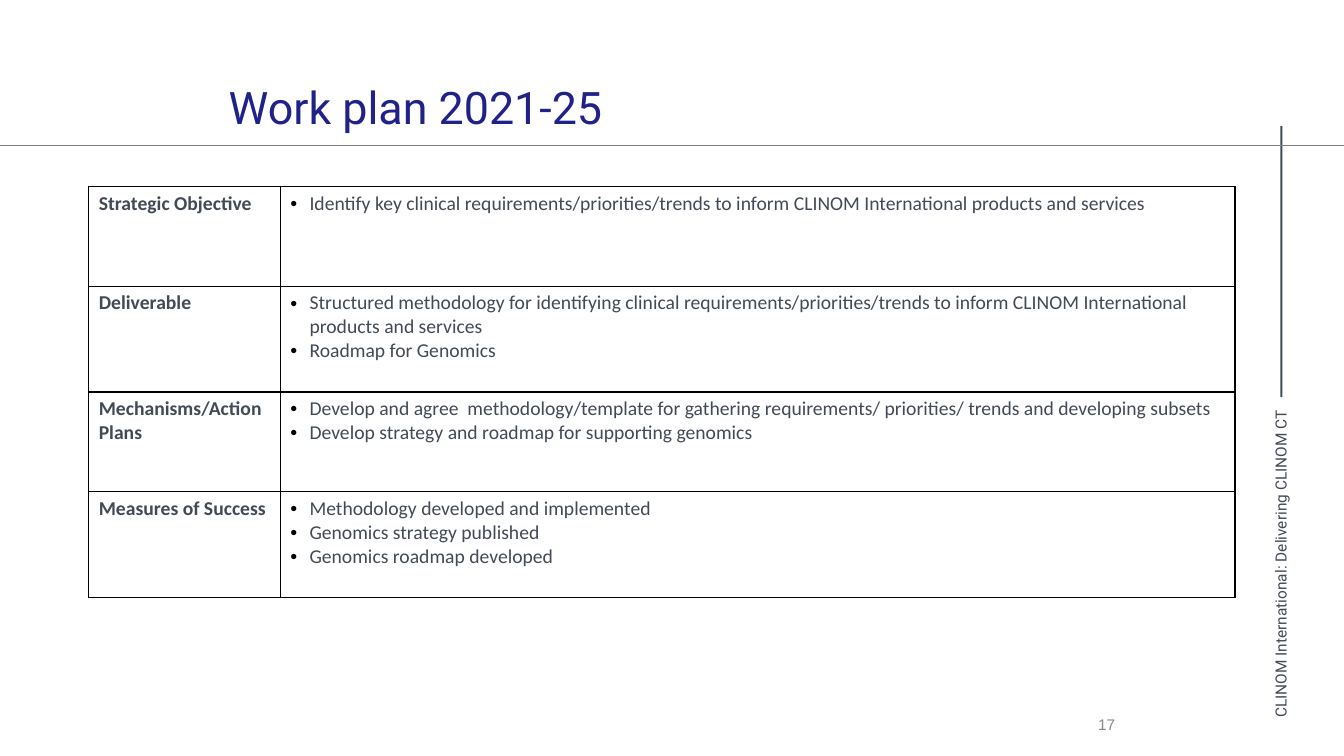
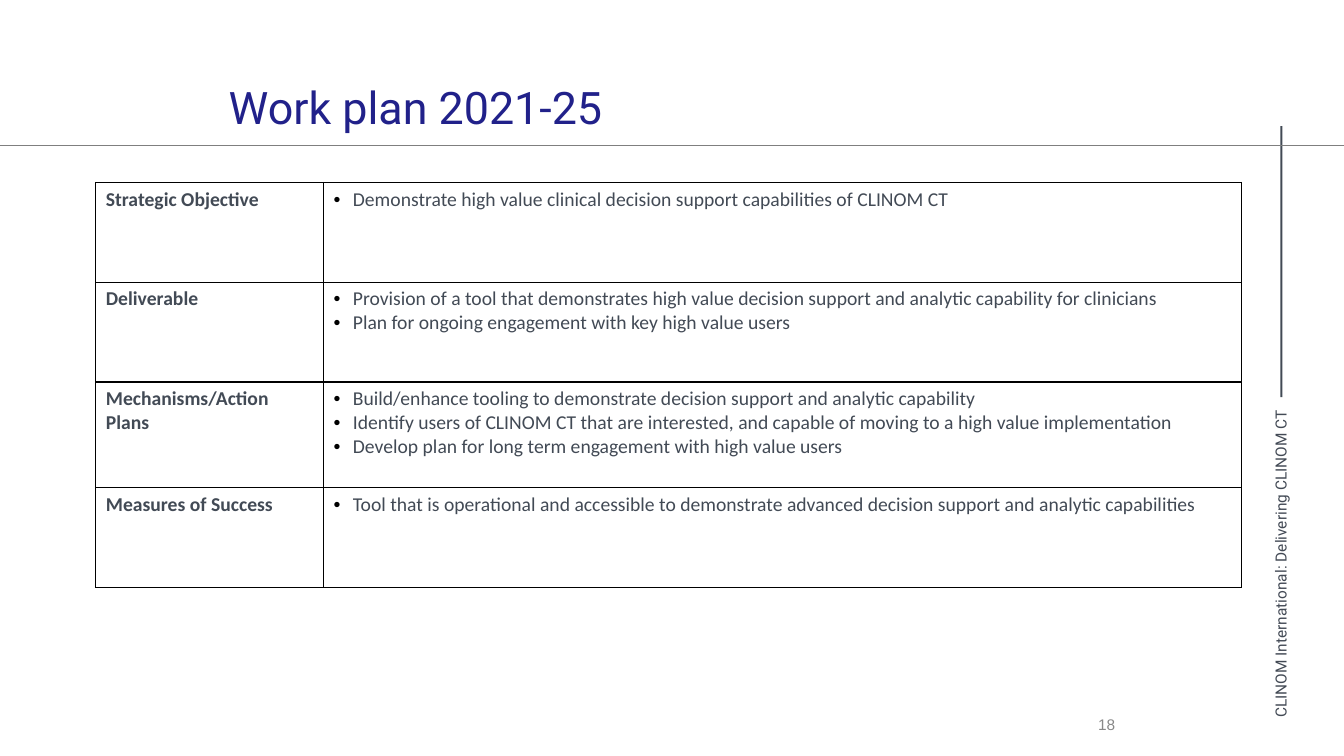
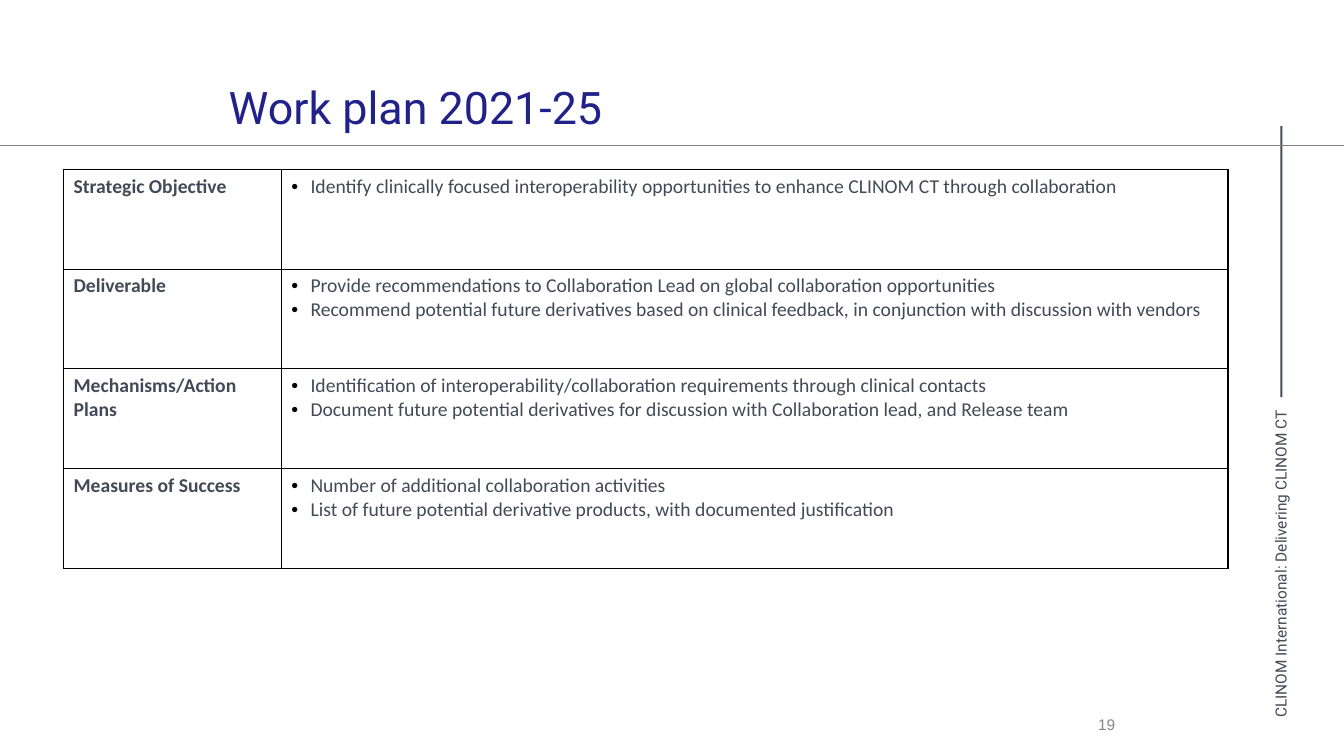
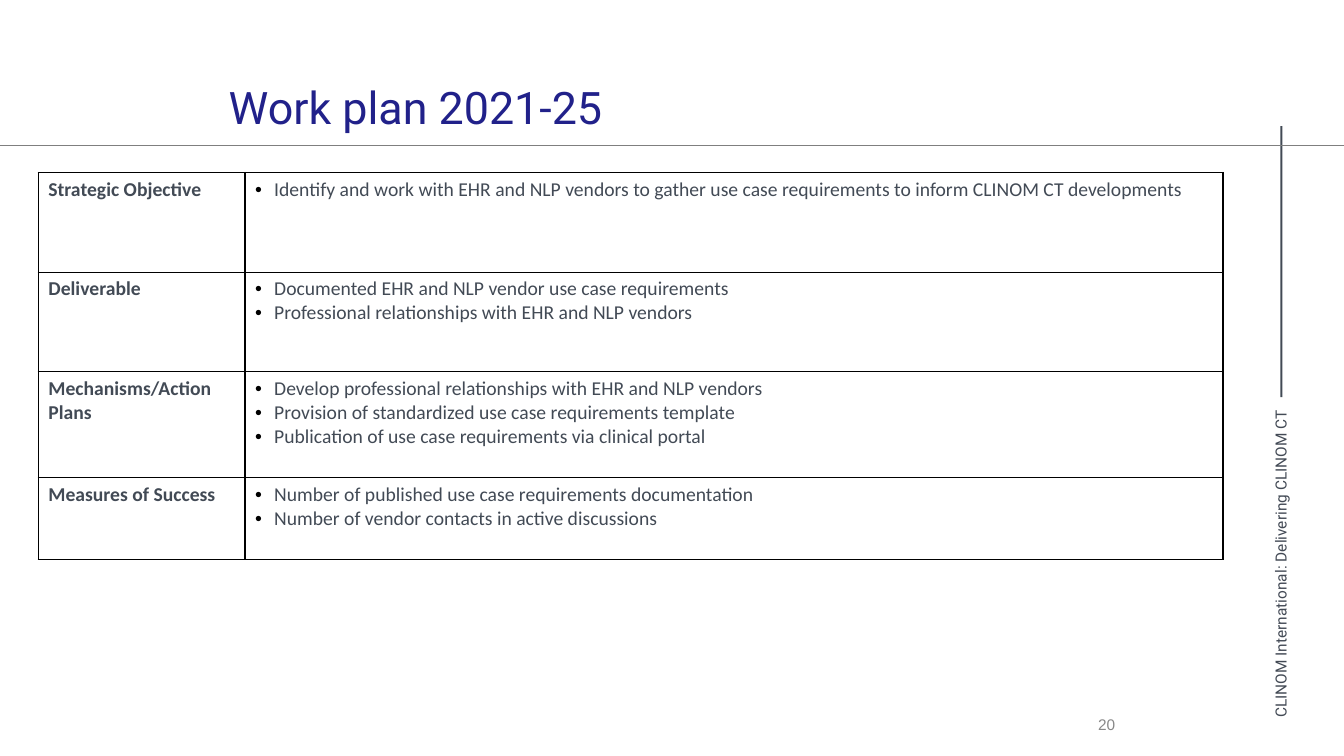
from lxml.etree import SubElement
from pptx import Presentation
from pptx.dml.color import RGBColor
from pptx.enum.shapes import MSO_CONNECTOR, MSO_SHAPE
from pptx.enum.text import MSO_ANCHOR as Anchor, PP_ALIGN as Align
from pptx.oxml.ns import qn
from pptx.util import Inches, Pt

TITLE = "Work plan 2021-25"
TAGLINE = "CLINOM International: Delivering CLINOM CT"
FIRST_NUMBER = 17
HEADINGS = ["Strategic Objective", "Deliverable", "Mechanisms/Action Plans", "Measures of Success"]

# Each plan: table corner, column widths, row heights, bullets for each heading
PLANS = [
    {"corner": (0.88, 1.85), "columns": (1.9, 9.47), "rows": (0.99, 1.05, 0.99, 1.05), "bullets": [
        ["Identify key clinical requirements/priorities/trends to inform CLINOM International products and services"],
        ["Structured methodology for identifying clinical requirements/priorities/trends to inform "
         "CLINOM International products and services",
         "Roadmap for Genomics"],
        ["Develop and agree  methodology/template for gathering requirements/ priorities/ trends "
         "and developing subsets",
         "Develop strategy and roadmap for supporting genomics"],
        ["Methodology developed and implemented",
         "Genomics strategy published",
         "Genomics roadmap developed"],
    ]},
    {"corner": (0.95, 1.81), "columns": (2.26, 9.1), "rows": (0.99, 0.99, 1.05, 0.99), "bullets": [
        ["Demonstrate high value clinical decision support capabilities of CLINOM CT"],
        ["Provision of a tool that demonstrates high value decision support and analytic capability for clinicians",
         "Plan for ongoing engagement with key high value users"],
        ["Build/enhance tooling to demonstrate decision support and analytic capability",
         "Identify users of CLINOM CT that are interested, and capable of moving to a high value implementation",
         "Develop plan for long term engagement with high value users"],
        ["Tool that is operational and accessible to demonstrate advanced decision support "
         "and analytic capabilities"],
    ]},
    {"corner": (0.63, 1.68), "columns": (2.16, 9.39), "rows": (0.99, 0.99, 0.99, 0.99), "bullets": [
        ["Identify clinically focused interoperability opportunities to enhance CLINOM CT through collaboration"],
        ["Provide recommendations to Collaboration Lead on global collaboration opportunities",
         "Recommend potential future derivatives based on clinical feedback, in conjunction "
         "with discussion with vendors"],
        ["Identification of interoperability/collaboration requirements through clinical contacts",
         "Document future potential derivatives for discussion with Collaboration lead, and Release team"],
        ["Number of additional collaboration activities",
         "List of future potential derivative products, with documented justification"],
    ]},
    {"corner": (0.38, 1.71), "columns": (2.05, 9.7), "rows": (0.99, 0.99, 1.05, 0.81), "bullets": [
        ["Identify and work with EHR and NLP vendors to gather use case requirements to inform "
         "CLINOM CT developments"],
        ["Documented EHR and NLP vendor use case requirements",
         "Professional relationships with EHR and NLP vendors"],
        ["Develop professional relationships with EHR and NLP vendors",
         "Provision of standardized use case requirements template",
         "Publication of use case requirements via clinical portal"],
        ["Number of published use case requirements documentation",
         "Number of vendor contacts in active discussions"],
    ]},
]

WIDTH, HEIGHT = 13.33, 7.5
RULE_TOP = 1.44
BULLET_INDENT = 0.19
COLOURS = {"title": "21218A", "text": "424A55", "tagline": "434A55", "number": "888888",
           "rule": "7F7F7F", "border": "000000"}
STYLES = {
    "title": {"name": "Roboto", "size": Pt(32)},
    "tagline": {"name": "Roboto", "size": Pt(11)},
    "number": {"name": "Arial", "size": Pt(11)},
    "text": {"name": "Calibri", "size": Pt(14)},
}


def colour(key):
    return RGBColor.from_string(COLOURS[key])


def style(para, key, bold=False):
    for name, value in {**STYLES[key], "bold": bold}.items():
        setattr(para.font, name, value)
    para.font.color.rgb = colour(key)


def add_text(page, frame, text, key, anchor=Anchor.TOP, align=Align.LEFT, rotation=0):
    box = page.shapes.add_textbox(*map(Inches, frame))
    box.rotation = rotation
    box.text_frame.word_wrap = True
    box.text_frame.vertical_anchor = anchor
    para = box.text_frame.paragraphs[0]
    para.text, para.alignment = text, align
    style(para, key)


def add_frame(page, number):
    """Draw the title, rule, side strip and page number."""
    add_text(page, (10.99, 5.36, 3.43, 0.29), TAGLINE, "tagline", rotation=270)
    strip = page.shapes.add_shape(MSO_SHAPE.RECTANGLE, *map(Inches, (12.7, 1.25, 0.02, 2.69)))
    strip.shadow.inherit = False
    strip.fill.solid()
    strip.fill.fore_color.rgb = colour("text")
    strip.line.fill.background()
    rule = page.shapes.add_connector(MSO_CONNECTOR.STRAIGHT, *map(Inches, (0, RULE_TOP, WIDTH, RULE_TOP)))
    rule.line.color.rgb = colour("rule")
    rule.line.width = Pt(0.75)
    SubElement(rule._element.spPr, qn("a:effectLst"))
    add_text(page, (8.83, 7.03, 2.33, 0.32), str(number), "number", Anchor.MIDDLE, Align.RIGHT)
    add_text(page, (2.17, 0.78, 7.21, 0.56), TITLE, "title", Anchor.MIDDLE)


def add_bullet(para):
    props = para._p.get_or_add_pPr()
    props.set("marL", str(Inches(BULLET_INDENT)))
    props.set("indent", str(-Inches(BULLET_INDENT)))
    SubElement(SubElement(props, qn("a:buClr")), qn("a:srgbClr"), val=COLOURS["border"])
    SubElement(props, qn("a:buFont"), typeface="Arial")
    SubElement(props, qn("a:buChar"), char="•")


def outline(cell):
    """Give a cell thin borders and no fill."""
    props = cell._tc.get_or_add_tcPr()
    for side in ("lnL", "lnR", "lnT", "lnB"):
        line = SubElement(props, qn(f"a:{side}"), w=str(Pt(1)))
        SubElement(SubElement(line, qn("a:solidFill")), qn("a:srgbClr"), val=COLOURS["border"])
    cell.fill.background()


def fill_cell(cell, lines, bulleted):
    outline(cell)
    cell.text = "\n".join(lines)
    for para in cell.text_frame.paragraphs:
        if bulleted:
            add_bullet(para)
        style(para, "text", bold=not bulleted)


def add_plan(page, plan):
    columns, rows = plan["columns"], plan["rows"]
    frame = (*plan["corner"], sum(columns), sum(rows))
    table = page.shapes.add_table(len(rows), len(columns), *map(Inches, frame)).table
    table.first_row = table.horz_banding = False
    for column, width in zip(table.columns, columns):
        column.width = Inches(width)
    for row, height, heading, bullets in zip(table.rows, rows, HEADINGS, plan["bullets"]):
        row.height = Inches(height)
        fill_cell(row.cells[0], [heading], bulleted=False)
        fill_cell(row.cells[1], bullets, bulleted=True)


def main():
    deck = Presentation()
    deck.slide_width, deck.slide_height = Inches(WIDTH), Inches(HEIGHT)
    for number, plan in enumerate(PLANS, FIRST_NUMBER):
        page = deck.slides.add_slide(deck.slide_layouts[6])
        add_frame(page, number)
        add_plan(page, plan)
    deck.save("out.pptx")


if __name__ == "__main__":
    main()
